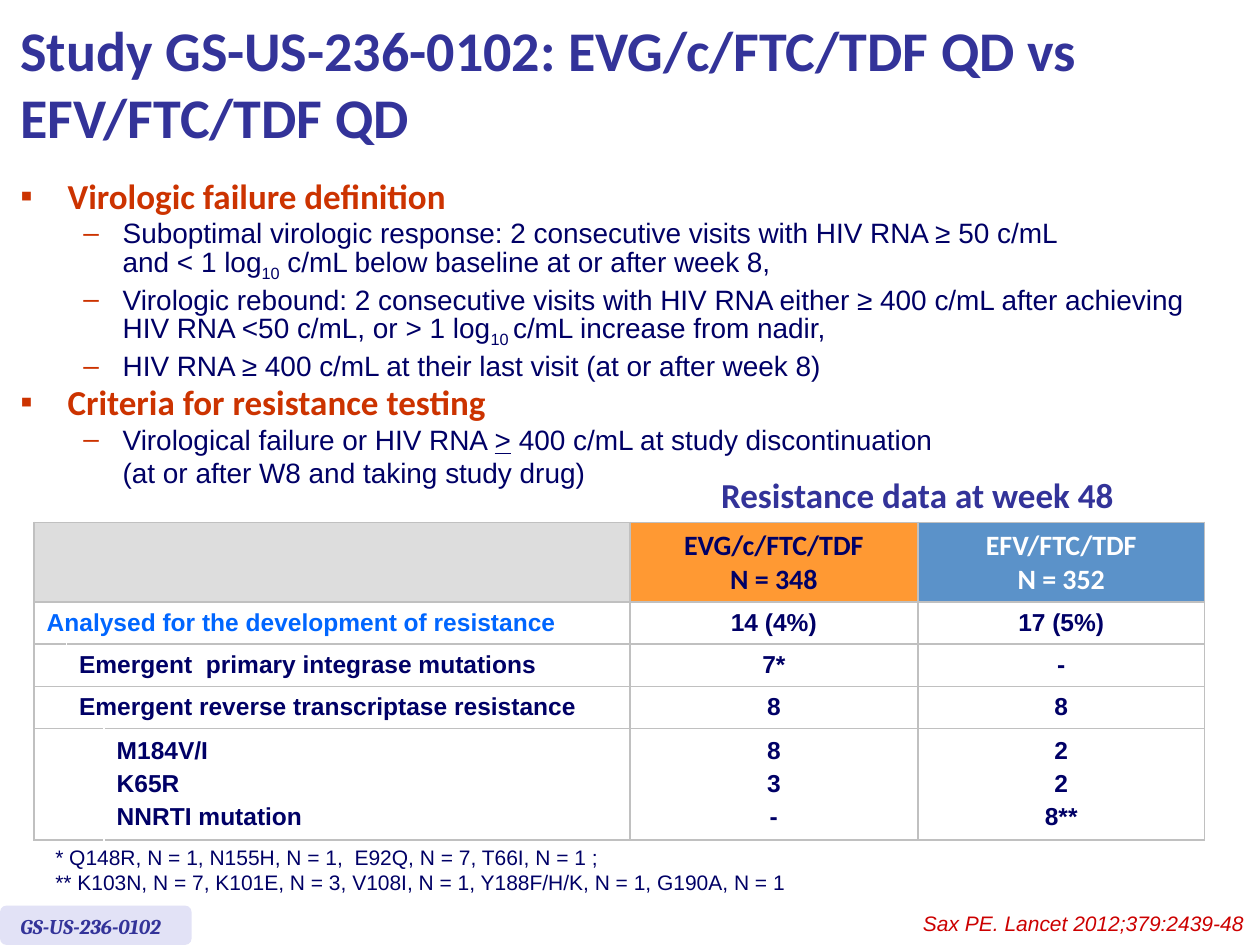
from lxml import etree
from pptx import Presentation
from pptx.dml.color import RGBColor
from pptx.enum.shapes import MSO_SHAPE
from pptx.enum.text import MSO_ANCHOR, PP_ALIGN
from pptx.oxml.ns import qn
from pptx.util import Pt

LEFT, CENTER, RIGHT = PP_ALIGN.LEFT, PP_ALIGN.CENTER, PP_ALIGN.RIGHT
TOP, MIDDLE = MSO_ANCHOR.TOP, MSO_ANCHOR.MIDDLE
ROUNDED = MSO_SHAPE.ROUNDED_RECTANGLE

COLORS = {
    "indigo": "333399", "navy": "000066", "rust": "CC3300", "red": "CC0000",
    "blue": "0066FF", "white": "FFFFFF", "grey": "DDDDDD", "border": "C0C0C0",
    "orange": "FF9933", "steel": "5B92C9", "lavender": "E2E2F6",
}

# Body text: (level, segments); a segment is (text, style), \v breaks the line
DEFINITIONS = [
    (0, [("Virologic failure definition", "")]),
    (1, [("Suboptimal virologic response: 2 consecutive visits with HIV RNA ≥ 50 c/mL"
          "\vand < 1 log", ""), ("10", "sub"),
         (" c/mL below baseline at or after week 8,", "")]),
    (1, [("Virologic rebound: 2 consecutive visits with HIV RNA either ≥ 400 c/mL "
          "after achieving\vHIV RNA <50 c/mL, or > 1 log", ""), ("10 ", "sub"),
         ("c/mL increase from nadir,", "")]),
    (1, [("HIV RNA ≥ 400 c/mL at their last visit (at or after week 8)", "")]),
    (0, [("Criteria for resistance testing", "")]),
    (1, [("Virological failure or HIV RNA ", ""), (">", "underline"),
         (" 400 c/mL at study discontinuation\v(at or after W8 and taking study drug)", "")]),
]
# Per level: left margin, hanging indent, bullet, size, font, colour, bold
LEVELS = [
    (27, 27, "▪", 20, "Calibri", "rust", True),
    (58.5, 22.5, "–", 16, "Arial", "navy", False),
]

# Table: (column where the label starts, label, label colour, values of both arms)
COLUMN_WIDTHS = [18.5, 21.5, 300.5, 164.5, 164]
ROW_HEIGHTS = [45.5, 24, 24, 24, 63.5]
LABEL_END = 2
ARMS = [("EVG/c/FTC/TDF\vN = 348", "navy", "orange"),
        ("EFV/FTC/TDF\vN = 352", "white", "steel")]
RESULTS = [
    (0, "Analysed for the development of resistance", "blue", ["14 (4%)", "17 (5%)"]),
    (1, "Emergent  primary integrase mutations", "navy", ["7*", "-"]),
    (1, "Emergent reverse transcriptase resistance", "navy", ["8", "8"]),
    (2, "M184V/I\nK65R\nNNRTI mutation", "navy", ["8\n3\n-", "2\n2\n8**"]),
]


def rgb(name):
    return RGBColor.from_string(COLORS[name])


def style(paragraph, size, font, color, bold=False, italic=False):
    paragraph.font.size = Pt(size)
    paragraph.font.name = font
    paragraph.font.bold = bold
    paragraph.font.italic = italic
    paragraph.font.color.rgb = rgb(color)


def fill_text(frame, text, align, look, gap=0):
    """Write one paragraph per line of text, all with the same look."""
    for i, line in enumerate(text.split("\n")):
        paragraph = frame.paragraphs[0] if i == 0 else frame.add_paragraph()
        paragraph.text = line
        paragraph.alignment = align
        paragraph.space_after = Pt(gap)
        style(paragraph, **look)


def add_frame(shapes, box, anchor=TOP, wrap=True):
    frame = shapes.add_textbox(*map(Pt, box)).text_frame
    frame.word_wrap = wrap
    frame.vertical_anchor = anchor
    return frame


def add_label(shapes, box, text, align=LEFT, anchor=TOP, wrap=True, **look):
    frame = add_frame(shapes, box, anchor, wrap)
    fill_text(frame, text, align, look)
    return frame


def set_bullet(paragraph, left, hanging, char):
    props = paragraph._p.get_or_add_pPr()
    props.set("marL", str(Pt(left)))
    props.set("indent", str(-Pt(hanging)))
    color = etree.SubElement(props, qn("a:buClr"))
    etree.SubElement(color, qn("a:srgbClr"), val=COLORS["rust"])
    etree.SubElement(props, qn("a:buFont"), typeface="Arial")
    etree.SubElement(props, qn("a:buChar"), char=char)


def add_segment(paragraph, text, kind):
    for i, line in enumerate(text.split("\v")):
        if i:
            paragraph.add_line_break()
        run = paragraph.add_run()
        run.text = line
        if kind == "sub":
            run.font._element.set("baseline", "-25000")
        elif kind == "underline":
            run.font.underline = True


def add_definitions(shapes, box):
    frame = add_frame(shapes, box)
    for i, (level, segments) in enumerate(DEFINITIONS):
        paragraph = frame.paragraphs[0] if i == 0 else frame.add_paragraph()
        left, hanging, char, *look = LEVELS[level]
        paragraph.level = level
        paragraph.line_spacing = Pt(19)
        if level and i + 1 < len(DEFINITIONS) and DEFINITIONS[i + 1][0] == 0:
            paragraph.space_after = Pt(4)
        set_bullet(paragraph, left, hanging, char)
        style(paragraph, *look)
        for text, kind in segments:
            add_segment(paragraph, text, kind)


def set_borders(cell, sides):
    props = cell._tc.get_or_add_tcPr()
    for i, side in enumerate(sides):
        line = etree.Element(qn(f"a:ln{side}"), w=str(Pt(1)))
        solid = etree.SubElement(line, qn("a:solidFill"))
        etree.SubElement(solid, qn("a:srgbClr"), val=COLORS["border"])
        props.insert(i, line)


def set_cell(cell, text, align, size, font, color):
    cell.vertical_anchor = MIDDLE
    look = dict(size=size, font=font, color=color, bold=True)
    fill_text(cell.text_frame, text, align, look, gap=3 if "\n" in text else 0)


def add_results(shapes, left, top):
    table = shapes.add_table(len(ROW_HEIGHTS), len(COLUMN_WIDTHS), Pt(left), Pt(top),
                             Pt(sum(COLUMN_WIDTHS)), Pt(sum(ROW_HEIGHTS))).table
    table.first_row = table.horz_banding = False
    for column, width in zip(table.columns, COLUMN_WIDTHS):
        column.width = Pt(width)
    for row, height in zip(table.rows, ROW_HEIGHTS):
        row.height = Pt(height)

    # Fills and borders; the label columns have no lines between them
    for r in range(len(ROW_HEIGHTS)):
        for c in range(len(COLUMN_WIDTHS)):
            cell = table.cell(r, c)
            cell.fill.solid()
            cell.fill.fore_color.rgb = rgb("white" if r else "grey")
            sides = ["L"] if c == 0 or c > LABEL_END else []
            sides += ["R"] if c >= LABEL_END else []
            set_borders(cell, sides + ["T", "B"])

    # Header row
    table.cell(0, 0).merge(table.cell(0, LABEL_END))
    for c, (arm, color, fill) in enumerate(ARMS, LABEL_END + 1):
        cell = table.cell(0, c)
        cell.fill.fore_color.rgb = rgb(fill)
        set_cell(cell, arm, CENTER, 16, "Calibri", color)

    # Result rows
    for r, (start, label, color, values) in enumerate(RESULTS, 1):
        for c in range(start):
            spacer = table.cell(r, c)
            spacer.margin_top = spacer.margin_bottom = 0
        if start < LABEL_END:
            table.cell(r, start).merge(table.cell(r, LABEL_END))
        set_cell(table.cell(r, start), label, LEFT, 14, "Arial", color)
        for c, value in enumerate(values, LABEL_END + 1):
            set_cell(table.cell(r, c), value, CENTER, 14, "Arial", "navy")


def add_study_tag(shapes):
    tag = shapes.add_group_shape().shapes
    pill = tag.add_shape(ROUNDED, 0, Pt(517.5), Pt(109.5), Pt(22.5))
    pill.shadow.inherit = False
    pill.fill.solid()
    pill.fill.fore_color.rgb = rgb("lavender")
    pill.line.fill.background()
    add_label(tag, (4.5, 518.5, 101.5, 21.5), "GS-US-236-0102", size=12,
              font="Cambria", color="indigo", bold=True, italic=True)


def main():
    prs = Presentation()
    prs.slide_width, prs.slide_height = Pt(720), Pt(540)
    shapes = prs.slides.add_slide(prs.slide_layouts[6]).shapes

    # Title and definitions
    add_label(shapes, (4.5, 3.5, 687.5, 87),
              "Study GS-US-236-0102: EVG/c/FTC/TDF QD vs EFV/FTC/TDF QD",
              anchor=MIDDLE, size=32, font="Calibri", color="indigo", bold=True)
    add_definitions(shapes, (4.5, 101, 710.5, 186.5))

    # Resistance table with heading and footnotes
    heading = add_label(shapes, (404, 270, 240.5, 29), "Resistance data at week 48", CENTER,
                        wrap=False, size=20, font="Calibri", color="indigo", bold=True)
    heading.paragraphs[0].line_spacing = 0.9
    add_results(shapes, 19.5, 298.5)
    add_label(shapes, (24.5, 479, 522, 36.5),
              "* Q148R, N = 1, N155H, N = 1,  E92Q, N = 7, T66I, N = 1 ;\n"
              "** K103N, N = 7, K101E, N = 3, V108I, N = 1, Y188F/H/K, N = 1, G190A, N = 1",
              size=12, font="Arial", color="navy")

    # Footer
    add_label(shapes, (502, 516.5, 216, 21.5), "Sax PE. Lancet 2012;379:2439-48", RIGHT,
              size=12, font="Arial", color="red", italic=True)
    add_study_tag(shapes)
    prs.save("out.pptx")


if __name__ == "__main__":
    main()
